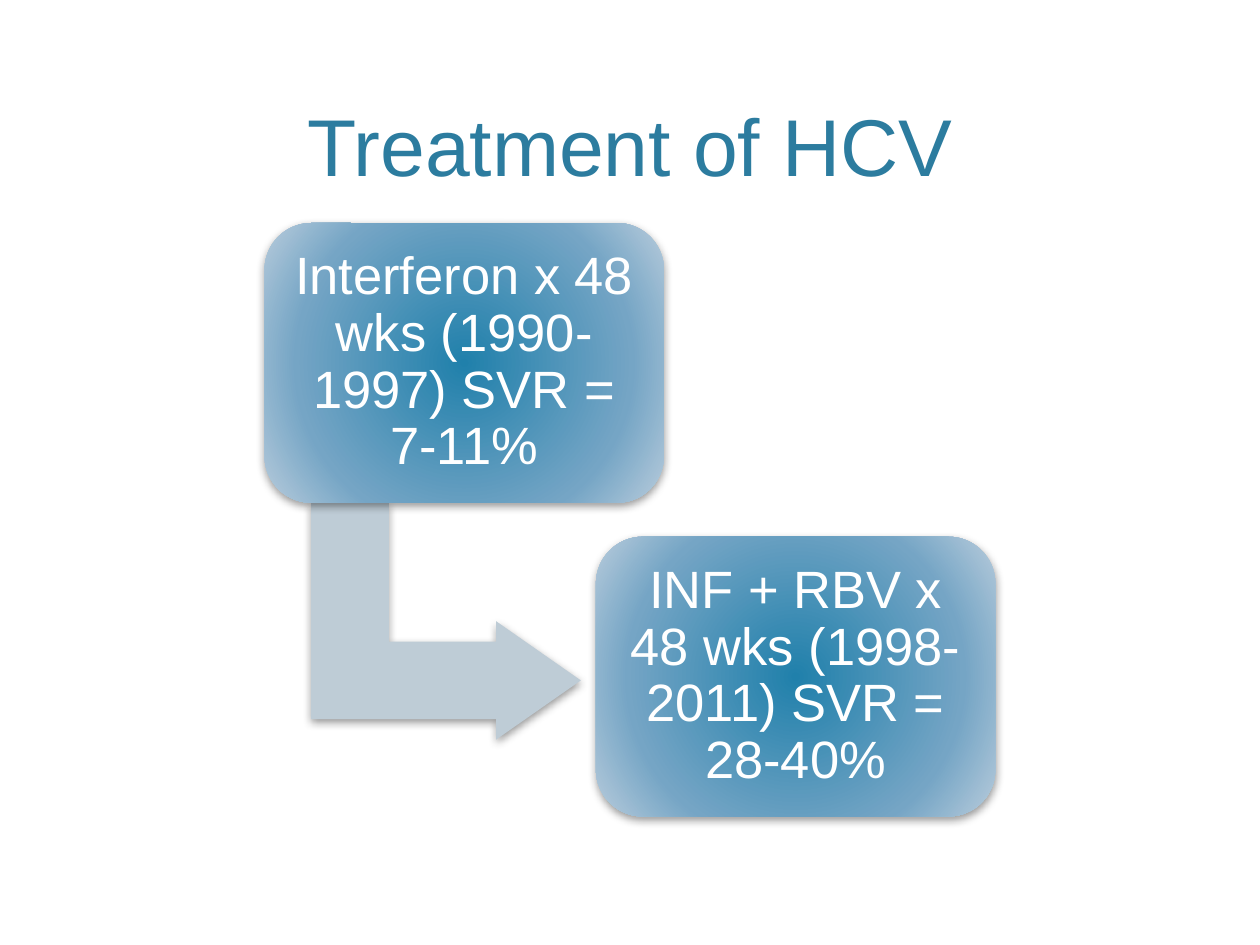
from lxml import etree
from pptx import Presentation
from pptx.dml.color import RGBColor
from pptx.enum.shapes import MSO_SHAPE
from pptx.enum.text import MSO_ANCHOR, PP_ALIGN
from pptx.oxml import parse_xml
from pptx.oxml.ns import nsdecls, qn
from pptx.util import Pt

ROUNDED, BENT_ARROW = MSO_SHAPE.ROUNDED_RECTANGLE, MSO_SHAPE.BENT_UP_ARROW
CENTER, MIDDLE, BOTTOM = PP_ALIGN.CENTER, MSO_ANCHOR.MIDDLE, MSO_ANCHOR.BOTTOM

FONT = "Arial"
TITLE_COLOR = RGBColor(0x2C, 0x7C, 0x9F)
WHITE = RGBColor(0xFF, 0xFF, 0xFF)
BLACK = RGBColor(0x00, 0x00, 0x00)
ARROW_COLOR = RGBColor(0xBE, 0xCC, 0xD6)
GLOW_STOPS = [
    (0, RGBColor(0x20, 0x80, 0xAB)),
    (69, RGBColor(0x75, 0xA5, 0xC5)),
    (100, RGBColor(0xB8, 0xCC, 0xDC)),
]

# Each step sits one offset right of and below the step before it
STEP_WIDTH, STEP_HEIGHT = 228.24, 159.84
FIRST_LEFT, FIRST_TOP = 151.2, 127.44
OFFSET_X, OFFSET_Y = 189.36, 179.28
STEPS = [
    "Interferon x 48 wks (1990-1997) SVR = 7-11%",
    "INF + RBV x 48 wks (1998-2011) SVR = 28-40%",
]


def add_text(frame, text, size, color):
    para = frame.paragraphs[0]
    para.alignment = CENTER
    span = para.add_run()
    span.text = text
    span.font.name = FONT
    span.font.size = Pt(size)
    span.font.color.rgb = color
    return para


def add_soft_shadow(shape):
    shape.shadow.inherit = False
    effects = shape._element.spPr.find(qn("a:effectLst"))
    shadow = etree.SubElement(
        effects, qn("a:outerShdw"), blurRad=str(Pt(5)), dist=str(Pt(2)),
        dir="5400000", rotWithShape="0")
    color = etree.SubElement(shadow, qn("a:srgbClr"), val=str(BLACK))
    etree.SubElement(color, qn("a:alpha"), val="40000")


def fill_radial(shape, stops):
    shape.fill.background()
    empty_fill = shape._element.spPr.find(qn("a:noFill"))
    stop_xml = "".join(
        f'<a:gs pos="{position * 1000}"><a:srgbClr val="{color}"/></a:gs>'
        for position, color in stops)
    gradient = parse_xml(
        f'<a:gradFill {nsdecls("a")} rotWithShape="1"><a:gsLst>{stop_xml}</a:gsLst>'
        '<a:path path="circle">'
        '<a:fillToRect l="100000" t="100000" r="100000" b="100000"/>'
        '</a:path></a:gradFill>')
    empty_fill.getparent().replace(empty_fill, gradient)


def add_title(page, left, top, width, height):
    title = page.shapes.title
    title.left, title.top = Pt(left), Pt(top)
    title.width, title.height = Pt(width), Pt(height)
    title.text_frame.vertical_anchor = BOTTOM
    add_text(title.text_frame, "Treatment of HCV", 46, TITLE_COLOR)


def add_arrow(page, left, top, width, height):
    # A quarter turn swaps the sides around the same centre
    shift = (width - height) / 2
    arrow = page.shapes.add_shape(
        BENT_ARROW, Pt(left + shift), Pt(top - shift), Pt(height), Pt(width))
    arrow.rotation = 90
    for index, value in enumerate((0.328, 0.25, 0.358)):
        arrow.adjustments[index] = value
    arrow.fill.solid()
    arrow.fill.fore_color.rgb = ARROW_COLOR
    arrow.line.fill.background()
    add_soft_shadow(arrow)


def add_step(page, text, left, top, width, height):
    step = page.shapes.add_shape(ROUNDED, Pt(left), Pt(top), Pt(width), Pt(height))
    step.adjustments[0] = 0.167
    fill_radial(step, GLOW_STOPS)
    step.line.fill.background()
    add_soft_shadow(step)
    frame = step.text_frame
    frame.word_wrap = True
    frame.vertical_anchor = MIDDLE
    frame.margin_left = frame.margin_right = Pt(8.64)
    frame.margin_top = frame.margin_bottom = Pt(8.64)
    para = add_text(frame, text, 30, WHITE)
    para.line_spacing = 0.9


def main():
    deck = Presentation()
    deck.slide_width, deck.slide_height = Pt(720), Pt(540)
    page = deck.slides.add_slide(deck.slide_layouts[5])

    add_title(page, 43.2, 8.64, 633.6, 105.12)
    # Arrow from the first step to the second
    add_arrow(page, 177.84, 287.28, 154.08, 135.36)
    for index, text in enumerate(STEPS):
        add_step(page, text, FIRST_LEFT + index * OFFSET_X,
                 FIRST_TOP + index * OFFSET_Y, STEP_WIDTH, STEP_HEIGHT)

    deck.save("out.pptx")


if __name__ == "__main__":
    main()
